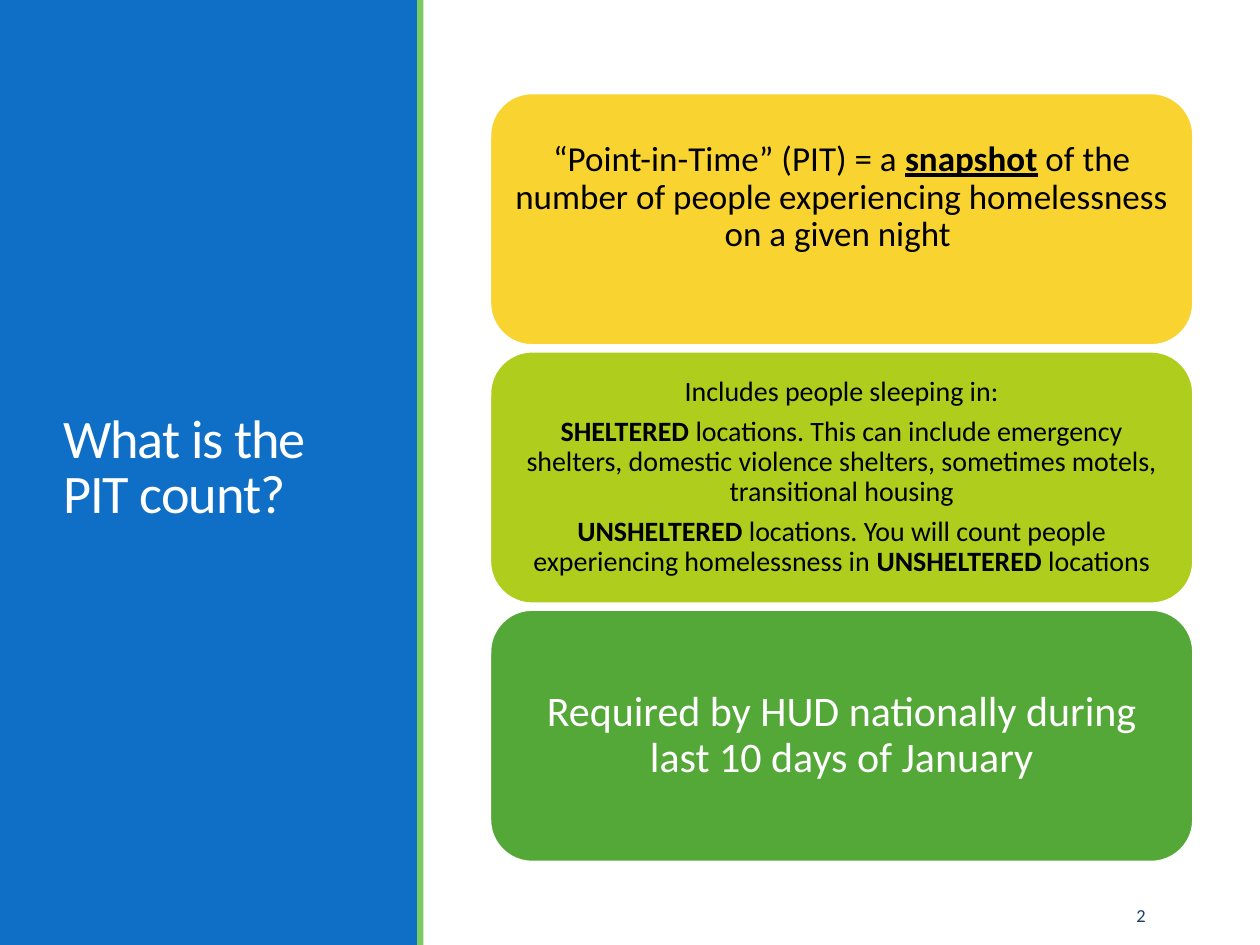
from pptx import Presentation
from pptx.dml.color import RGBColor as Rgb
from pptx.enum.shapes import MSO_SHAPE as Shape
from pptx.enum.text import MSO_ANCHOR as Anchor, MSO_AUTO_SIZE as Fit, PP_ALIGN as Align
from pptx.util import Inches, Pt

COLORS = {
    "blue": "0F6FC6", "edge": "7CCA62", "navy": "17406D",
    "yellow": "F9D32F", "lime": "AFCD1D", "green": "54A838",
    "white": "FFFFFF", "black": "000000",
}


def color(name):
    return Rgb.from_string(COLORS[name])


def write(frame, paras, size, ink, font="Calibri", align=Align.LEFT,
          line=1.0, after=0, inset=None, low=0, track=0):
    frame.word_wrap = True
    frame.auto_size = Fit.NONE
    frame.vertical_anchor = Anchor.MIDDLE
    if inset is not None:
        frame.margin_left = frame.margin_right = frame.margin_top = Inches(inset)
        frame.margin_bottom = Inches(inset + low)
    for i, runs in enumerate(paras):
        para = frame.paragraphs[0] if i == 0 else frame.add_paragraph()
        para.alignment = align
        para.line_spacing = line
        para.space_before = Pt(0)
        para.space_after = Pt(after)
        for text, marks in runs:
            run = para.add_run()
            run.text = text
            run.font.name = font
            run.font.size = Pt(size)
            run.font.bold = "b" in marks
            run.font.underline = "u" in marks
            run.font.color.rgb = color(ink)
            if track:
                run.font._element.set("spc", str(int(track * 100)))


class Page:
    font = "Calibri"

    def __init__(self, deck):
        self.slide = deck.slides.add_slide(deck.slide_layouts[5])
        self.shapes = self.slide.shapes

    def block(self, kind, box, fill, line=None):
        item = self.shapes.add_shape(kind, *map(Inches, box))
        item.shadow.inherit = False
        item.fill.solid()
        item.fill.fore_color.rgb = color(fill)
        if line:
            item.line.color.rgb = color(line)
            item.line.width = Pt(1.25)
        else:
            item.line.fill.background()
        return item

    def bar(self, box, fill):
        self.block(Shape.RECTANGLE, box, fill)

    def card(self, box, fill, paras, size, ink, inset, low=0):
        item = self.block(Shape.ROUNDED_RECTANGLE, box, fill, "white")
        write(item.text_frame, paras, size, ink, self.font, Align.CENTER,
              line=0.9, after=size * 0.35, inset=inset, low=low)

    def title(self, box, text):
        item = self.shapes.title
        item.left, item.top, item.width, item.height = map(Inches, box)
        write(item.text_frame, [[(text, "")]], 31, "white", self.font,
              line=0.85, track=-0.5)
        tree = item._element.getparent()
        tree.append(item._element)

    def number(self, box, text):
        item = self.shapes.add_textbox(*map(Inches, box))
        write(item.text_frame, [[(text, "")]], 10.5, "navy", self.font,
              Align.RIGHT, after=6)


def main():
    deck = Presentation()
    deck.slide_width, deck.slide_height = Inches(10), Inches(7.5)
    page = Page(deck)

    page.bar((0, 0, 3.32, 7.5), "blue")
    page.bar((3.31, 0, 0.05, 7.5), "edge")
    page.title((0.4, 0.57, 2.53, 6.31), "What is the PIT count?")
    page.number((8.3, 7.06, 0.89, 0.4), "2")

    what = [[
        ("“Point-in-Time” (PIT) = a ", ""),
        ("snapshot", "bu"),
        (" of the number of people experiencing homelessness on a given night ", ""),
    ]]
    who = [
        [("Includes people sleeping in:", "")],
        [("SHELTERED", "b"),
         (" locations. This can include emergency shelters, domestic violence "
          "shelters, sometimes motels, transitional housing", "")],
        [("UNSHELTERED ", "b"),
         ("locations. You will count people experiencing homelessness in ", ""),
         ("UNSHELTERED ", "b"),
         ("locations", "")],
    ]
    when = [[("Required by HUD nationally during last 10 days of January", "")]]

    cards = [
        ("yellow", what, 20, "black", 0.08, 0.34),
        ("lime", who, 16, "black", 0.07),
        ("green", when, 24, "white", 0.1),
    ]
    left, top, wide, high, step = 3.89, 0.74, 5.58, 2, 2.05
    for i, card in enumerate(cards):
        page.card((left, top + i * step, wide, high), *card)

    deck.save("out.pptx")


if __name__ == "__main__":
    main()
